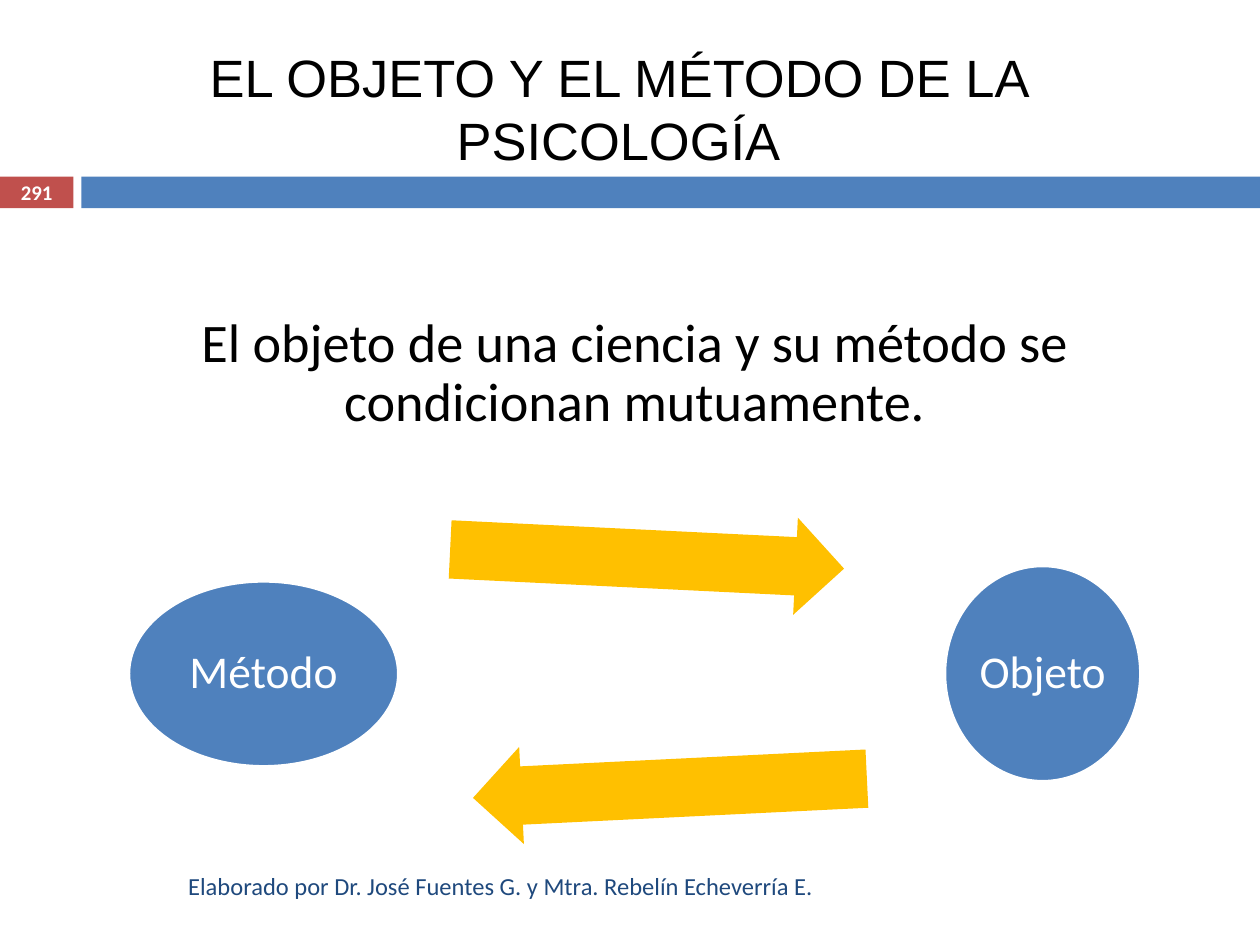
from pptx import Presentation
from pptx.dml.color import RGBColor
from pptx.enum.shapes import MSO_SHAPE
from pptx.enum.text import MSO_ANCHOR, PP_ALIGN
from pptx.util import Cm, Pt

RECT, OVAL, ARROW = MSO_SHAPE.RECTANGLE, MSO_SHAPE.OVAL, MSO_SHAPE.RIGHT_ARROW
MIDDLE = MSO_ANCHOR.MIDDLE
CENTER, RIGHT = PP_ALIGN.CENTER, PP_ALIGN.RIGHT

BLUE, RED, GOLD, NAVY = "4F81BD", "C0504D", "FFC000", "1F497D"
WHITE, BLACK = "FFFFFF", "000000"
DIAGRAM = {"line_spacing": 0.9}


def rgb(value):
    return RGBColor.from_string(value)


def set_text(sp, text, size, color, font="Calibri", bold=False,
             align=CENTER, inset=(0.25, 0.13), para=None):
    tf = sp.text_frame
    x, y = (Cm(v) for v in inset)
    frame = {"word_wrap": True, "vertical_anchor": MIDDLE,
             "margin_left": x, "margin_right": x,
             "margin_top": y, "margin_bottom": y}
    for name, value in frame.items():
        setattr(tf, name, value)
    p = tf.paragraphs[0]
    for name, value in {"alignment": align, **(para or {})}.items():
        setattr(p, name, value)
    r = p.add_run()
    r.text = text
    for name, value in {"name": font, "size": Pt(size), "bold": bold}.items():
        setattr(r.font, name, value)
    r.font.color.rgb = rgb(color)


def add_title(s, text, box):
    sp = s.shapes.title
    for name, value in zip(("left", "top", "width", "height"), box):
        setattr(sp, name, Cm(value))
    set_text(sp, text, 30, BLACK, font="Arial")


def add_shape(s, kind, box, fill, outline=None):
    sp = s.shapes.add_shape(kind, *map(Cm, box))
    sp.shadow.inherit = False
    sp.fill.solid()
    sp.fill.fore_color.rgb = rgb(fill)
    if outline:
        sp.line.color.rgb = rgb(outline)
        sp.line.width = Pt(1.5)
    else:
        sp.line.fill.background()
    return sp


def add_oval(s, text, box):
    sp = add_shape(s, OVAL, box, BLUE, WHITE)
    set_text(sp, text, 26, WHITE, inset=(0.1, 0.1), para=DIAGRAM)


def add_arrow(s, left, top, rotation):
    sp = add_shape(s, ARROW, (left, top, 7.95, 1.96), GOLD)
    sp.adjustments[0] = 0.6
    sp.adjustments[1] = 0.5
    sp.rotation = rotation


def add_text(s, text, box, size, color, **options):
    sp = s.shapes.add_textbox(*map(Cm, box))
    set_text(sp, text, size, color, **options)


def main():
    prs = Presentation()
    prs.slide_width, prs.slide_height = Cm(25.4), Cm(19.05)
    s = prs.slides.add_slide(prs.slide_layouts[5])

    add_title(s, "EL OBJETO Y EL MÉTODO DE LA PSICOLOGÍA",
              (1.7, 0.71, 21.54, 2.92))
    add_shape(s, RECT, (0, 3.56, 1.48, 0.64), RED)
    add_shape(s, RECT, (1.64, 3.56, 23.76, 0.64), BLUE)

    add_oval(s, "Método", (2.6, 11.72, 5.43, 3.73))
    add_arrow(s, 9.07, 10.29, 2.8)
    add_oval(s, "Objeto", (19.05, 11.41, 3.94, 4.34))
    add_arrow(s, 9.53, 14.91, 177.2)

    add_text(s, "El objeto de una ciencia y su método se condicionan mutuamente.",
             (2.69, 5.77, 20.19, 3.56), 31, BLACK,
             inset=(0.1, 0.1), para=DIAGRAM)
    add_text(s, "291", (0, 3.53, 1.48, 0.69), 11.9, WHITE, bold=True)
    add_text(s, "Elaborado por Dr. José Fuentes G. y Mtra. Rebelín Echeverría E. ",
             (1.7, 17.35, 15.06, 1.02), 14, NAVY, align=RIGHT)

    prs.save("out.pptx")


if __name__ == "__main__":
    main()
